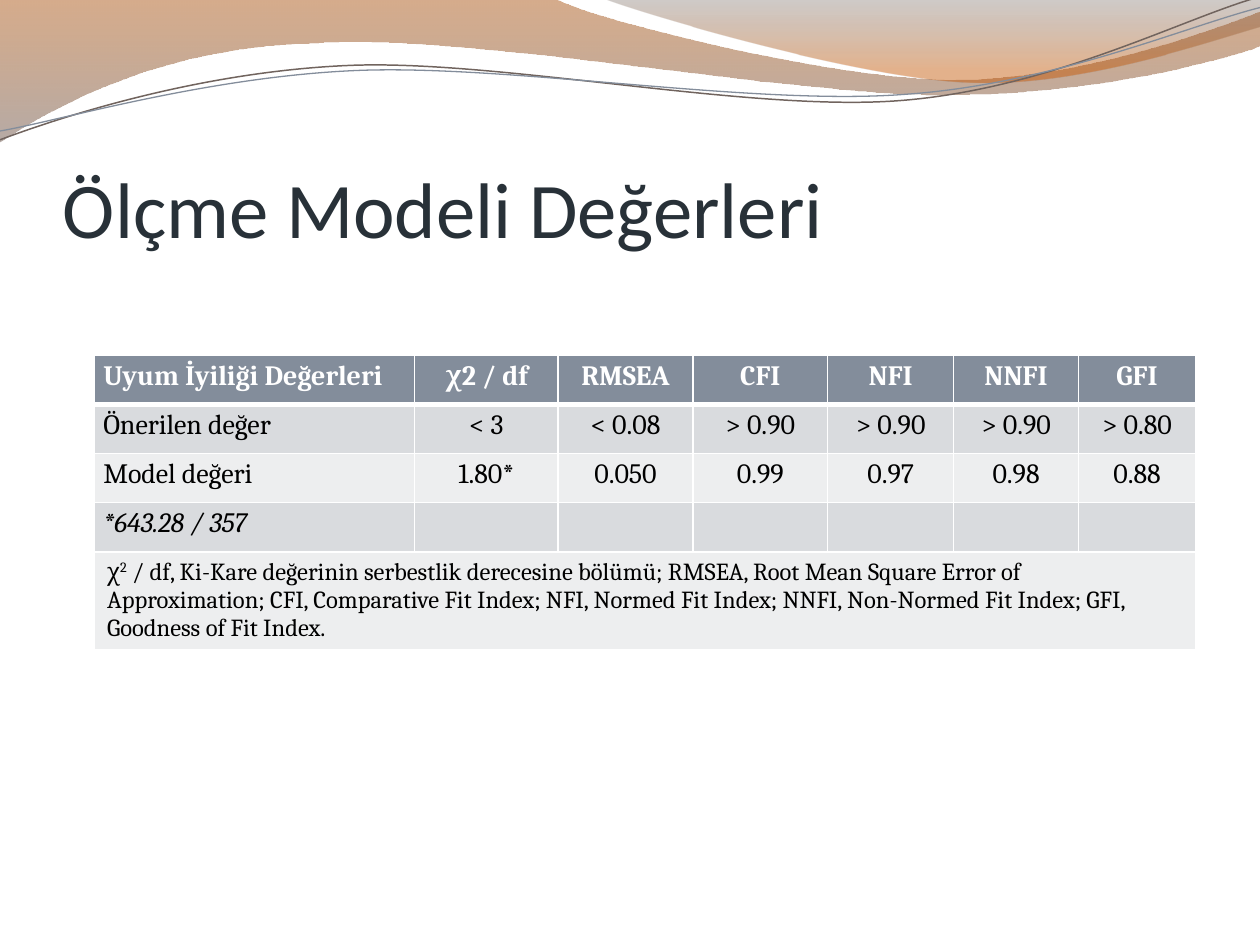
"""Build a slide with a wave header and a table of model fit values."""
from lxml import etree
from pptx import Presentation, util as u
from pptx.dml.color import RGBColor
from pptx.enum import text
from pptx.oxml.ns import qn

ALIGN = text.PP_ALIGN
HEADER, DARK_BAND, LIGHT_BAND, WHITE, BLACK = "838D9B", "D9DBDE", "EDEEEF", "FFFFFF", "000000"
COLUMN_WIDTHS = [2.54, 1.14, 1.07, 1.07, 1, 0.99, 0.93]
ROW_HEIGHTS = [0.39] * 4 + [0.77]
FIT_ROWS = [
    ["Uyum İyiliği Değerleri", "χ2 / df", "RMSEA", "CFI", "NFI", "NNFI", "GFI"],
    ["Önerilen değer", "< 3", "< 0.08", "> 0.90", "> 0.90", "> 0.90", "> 0.80"],
    ["Model değeri", "1.80*", "0.050", "0.99", "0.97", "0.98", "0.88"],
    ["*643.28 / 357"] + [""] * 6,
]
NOTE = [
    ("χ", False),
    ("2", True),
    (" / df, Ki-Kare değerinin serbestlik derecesine bölümü; RMSEA, Root Mean Square Error of "
     "Approximation; CFI, Comparative Fit Index; NFI, Normed Fit Index; NNFI, Non-Normed Fit "
     "Index; GFI, Goodness of Fit Index.", False),
]
WIDE_WAVE = [
    (0, 0), (4.4, -0.01),
    (4.76, 0.17, 6.64, 0.63, 7.58, 0.63), (8.53, 0.63, 9.58, 0.26, 10, 0.09),
    (10.01, 0.36),
    (9.83, 0.44, 8.7, 0.76, 7.46, 0.75), (6.22, 0.75, 3.82, 0.28, 2.57, 0.34),
    (1.29, 0.36, 0.46, 0.83, -0.01, 1.13),
]
RIGHT_WAVE = [
    (4.79, -0.01),
    (5.09, 0.11, 6.82, 0.62, 7.69, 0.65), (8.56, 0.69, 9.61, 0.32, 10, 0.21),
    (10, 0),
]
BROWN_CURVE = [
    (0, 1.11),
    (0.48, 0.93, 1.58, 0.57, 2.77, 0.52), (3.95, 0.47, 5.93, 0.89, 7.13, 0.8),
    (8.33, 0.71, 9.38, 0.15, 9.98, -0.02),
]
GREY_CURVE = [
    (0, 1.04),
    (0.47, 0.96, 1.64, 0.61, 2.83, 0.56), (4.03, 0.51, 5.97, 0.84, 7.17, 0.75),
    (8.36, 0.67, 9.41, 0.21, 10, 0.06),
]


def colour(hex_text):
    """Turn a hex string into a colour."""
    return RGBColor.from_string(hex_text)


def bend(outline, segments):
    """Join each three straight steps of a curved segment into one cubic curve."""
    steps = iter(list(outline.element.spPr.iter(qn("a:lnTo"))))
    for segment in segments[1:]:
        parts = [next(steps) for _ in range(len(segment) // 2)]
        if len(parts) == 3:
            cubic = etree.Element(qn("a:cubicBezTo"))
            parts[0].addprevious(cubic)
            for part in parts:
                cubic.append(part[0])
                part.getparent().remove(part)


def add_outline(page, segments, closed):
    """Add a freeform of lines and cubic curves without a shadow."""
    start, *rest = [
        (u.Inches(x), u.Inches(y))
        for segment in segments for x, y in zip(segment[::2], segment[1::2])]
    builder = page.shapes.build_freeform(*start)
    builder.add_line_segments(rest, close=closed)
    outline = builder.convert_to_shape()
    bend(outline, segments)
    outline.shadow.inherit = False
    return outline


def add_wave(page, segments, stops):
    """Add a filled wave with a downward see-through gradient."""
    wave = add_outline(page, segments, True)
    wave.line.fill.background()
    wave.fill.gradient()
    wave.fill.gradient_angle = 270
    for stop, (position, hex_text, _) in zip(wave.fill.gradient_stops, stops):
        stop.position = position
        stop.color.rgb = colour(hex_text)
    for node, (_, _, opacity) in zip(wave.element.spPr.iter(qn("a:srgbClr")), stops):
        etree.SubElement(node, qn("a:alpha"), val=str(opacity * 1000))


def add_curve(page, segments, hex_text, points):
    """Add a thin open curve."""
    curve = add_outline(page, segments, False)
    curve.fill.background()
    curve.line.color.rgb = colour(hex_text)
    curve.line.width = u.Pt(points)


def set_font(para, name, size, hex_text, bold=False, italic=False):
    """Set the font of a whole paragraph."""
    font = para.font
    font.name, font.size, font.bold, font.italic = name, u.Pt(size), bold, italic
    font.color.rgb = colour(hex_text)


def add_title(deck, page, words):
    """Add the title, standing on the bottom of its box."""
    width, height = deck.slide_width, deck.slide_height
    box = page.shapes.add_textbox(
        int(width * 0.05), u.Inches(0.77), int(width * 0.9), int(height / 6))
    frame = box.text_frame
    frame.word_wrap = True
    frame.vertical_anchor = text.MSO_ANCHOR.BOTTOM
    frame.margin_left = frame.margin_right = frame.margin_bottom = 0
    frame.text = words
    set_font(frame.paragraphs[0], "Calibri", 45, "283138")


def style_cell(cell, fill, top=1, bottom=1):
    """Give a cell white borders and a plain fill."""
    properties = cell._tc.get_or_add_tcPr()
    for side, points in zip("LRTB", (1, 1, top, bottom)):
        border = etree.SubElement(properties, qn(f"a:ln{side}"), w=str(u.Pt(points)))
        solid = etree.SubElement(border, qn("a:solidFill"))
        etree.SubElement(solid, qn("a:srgbClr"), val=WHITE)
    cell.fill.solid()
    cell.fill.fore_color.rgb = colour(fill)


def fill_value(cell, words, row, column):
    """Write one fit value into its cell."""
    cell.margin_left = cell.margin_right = u.Inches(0.07)
    cell.margin_top = cell.margin_bottom = 0
    para = cell.text_frame.paragraphs[0]
    if words:
        para.add_run().text = words
    para.alignment = ALIGN.CENTER if column else ALIGN.LEFT
    para.line_spacing, para.space_after = 1.15, u.Pt(3)
    set_font(para, "Cambria", 16, BLACK if row else WHITE, bold=row == 0, italic=row == 3)


def fill_note(cell):
    """Write the abbreviations with a raised exponent."""
    cell.margin_bottom = u.Inches(0.03)
    para = cell.text_frame.paragraphs[0]
    set_font(para, "Cambria", 14, BLACK)
    for words, raised in NOTE:
        span = para.add_run()
        span.text = words
        if raised:
            span._r.get_or_add_rPr().set("baseline", "30000")


def add_fit_table(page):
    """Add the table of fit values with a note across its last row."""
    table = page.shapes.add_table(
        len(ROW_HEIGHTS), len(COLUMN_WIDTHS), u.Inches(0.75), u.Inches(2.82),
        u.Inches(sum(COLUMN_WIDTHS)), u.Inches(sum(ROW_HEIGHTS))).table
    for column, width in zip(table.columns, COLUMN_WIDTHS):
        column.width = u.Inches(width)
    for row, height in zip(table.rows, ROW_HEIGHTS):
        row.height = u.Inches(height)
    fills = [HEADER, DARK_BAND, LIGHT_BAND, DARK_BAND, LIGHT_BAND]
    for row, fill in enumerate(fills):
        for column in range(len(COLUMN_WIDTHS)):
            style_cell(table.cell(row, column), fill,
                       top=3 if row == 1 else 1, bottom=3 if row == 0 else 1)
    for row, values in enumerate(FIT_ROWS):
        for column, words in enumerate(values):
            fill_value(table.cell(row, column), words, row, column)
    note = table.cell(len(FIT_ROWS), 0)
    note.merge(table.cell(len(FIT_ROWS), len(COLUMN_WIDTHS) - 1))
    fill_note(note)


def main():
    """Build and save the deck."""
    deck = Presentation()
    deck.slide_width, deck.slide_height = u.Inches(10), u.Inches(7.5)
    page = deck.slides.add_slide(deck.slide_layouts[6])
    add_wave(page, WIDE_WAVE, [(0, "A44700", 45), (1, "7A655B", 55)])
    add_wave(page, RIGHT_WAVE, [(0, "61534C", 30), (0.8, "C45400", 45)])
    add_curve(page, BROWN_CURVE, "71645E", 0.85)
    add_curve(page, GREY_CURVE, HEADER, 0.75)
    add_title(deck, page, "Ölçme Modeli Değerleri")
    add_fit_table(page)
    deck.save("out.pptx")


if __name__ == "__main__":
    main()
